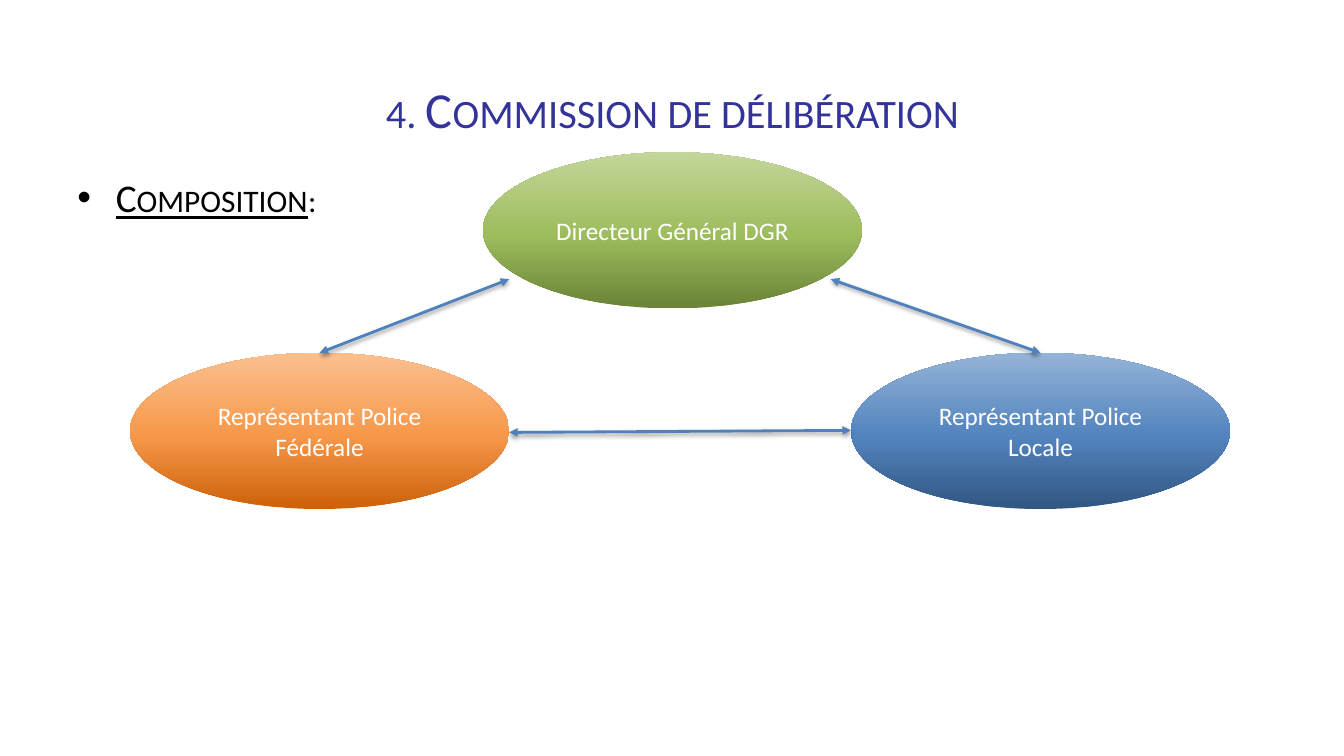
from copy import deepcopy

from lxml import etree
from pptx import Presentation
from pptx.dml.color import RGBColor
from pptx.enum.shapes import MSO_CONNECTOR, MSO_SHAPE
from pptx.enum.text import MSO_ANCHOR, PP_ALIGN
from pptx.oxml import parse_xml
from pptx.oxml.ns import nsdecls, qn
from pptx.util import Inches, Pt

CENTER, JUSTIFY = PP_ALIGN.CENTER, PP_ALIGN.JUSTIFY
TOP, MIDDLE = MSO_ANCHOR.TOP, MSO_ANCHOR.MIDDLE
ELLIPSE, STRAIGHT = MSO_SHAPE.OVAL, MSO_CONNECTOR.STRAIGHT

FONT = "Calibri"
WHITE = RGBColor(0xFF, 0xFF, 0xFF)
BLACK = RGBColor(0, 0, 0)
NAVY = RGBColor(0x33, 0x33, 0x99)
ARROW_BLUE = RGBColor(0x4F, 0x81, 0xBD)
GREENS = [RGBColor(0x6A, 0x83, 0x36), RGBColor(0x9E, 0xBD, 0x5E), RGBColor(0xC3, 0xD6, 0x9B)]
ORANGES = [RGBColor(0xCC, 0x61, 0x09), RGBColor(0xF7, 0x99, 0x4C), RGBColor(0xFA, 0xC0, 0x90)]
BLUES = [RGBColor(0x31, 0x56, 0x83), RGBColor(0x54, 0x85, 0xBF), RGBColor(0x95, 0xB3, 0xD7)]
STOPS = [0, 0.48, 1]

MEMBER_W, MEMBER_H = 3.76, 1.55
SHADOW = (
    f'<a:effectLst {nsdecls("a")}><a:outerShdw blurRad="40000" dist="20000" dir="5400000" '
    'rotWithShape="0"><a:srgbClr val="000000"><a:alpha val="38000"/></a:srgbClr>'
    "</a:outerShdw></a:effectLst>"
)


def format_run(r, size, color, small_caps=False):
    r.font.name = FONT
    r.font.size = Pt(size)
    r.font.color.rgb = color
    if small_caps:
        r.font._element.set("cap", "small")


def set_title(s, text):
    title = s.shapes.title
    title.left, title.top = Inches(0.67), Inches(0.3)
    title.width, title.height = Inches(12), Inches(1.25)
    tf = title.text_frame
    tf.text = text
    tf.vertical_anchor = MIDDLE
    p = tf.paragraphs[0]
    p.alignment = CENTER
    p.line_spacing = 1.5
    format_run(p.runs[0], 36, NAVY, True)


def add_heading(s, text):
    tf = s.shapes.add_textbox(Inches(0.67), Inches(1.67), Inches(4), Inches(0.6)).text_frame
    tf.word_wrap = True
    tf.vertical_anchor = TOP
    p = tf.paragraphs[0]
    p.alignment = JUSTIFY
    pPr = p._p.get_or_add_pPr()
    pPr.set("marL", str(Inches(0.38)))
    pPr.set("indent", str(-Inches(0.38)))
    etree.SubElement(pPr, qn("a:buFont")).set("typeface", "Arial")
    etree.SubElement(pPr, qn("a:buChar")).set("char", "•")
    for part in (text, ":"):
        r = p.add_run()
        r.text = part
        format_run(r, 28, BLACK, True)
        r.font.underline = part == text


def add_member(s, left, top, text, colors):
    sp = s.shapes.add_shape(ELLIPSE, Inches(left), Inches(top), Inches(MEMBER_W), Inches(MEMBER_H))
    sp.shadow.inherit = False
    sp.line.fill.background()
    sp.fill.gradient()
    sp.fill.gradient_angle = 90
    gs_list = sp._element.spPr.find(".//" + qn("a:gsLst"))
    gs_list.append(deepcopy(gs_list[-1]))
    for stop, position, color in zip(sp.fill.gradient_stops, STOPS, colors):
        stop.position = position
        stop.color.rgb = color
    tf = sp.text_frame
    tf.word_wrap = True
    tf.vertical_anchor = MIDDLE
    tf.text = text
    p = tf.paragraphs[0]
    p.alignment = CENTER
    format_run(p.runs[0], 18, WHITE)
    return sp


def add_double_arrow(s, x1, y1, x2, y2):
    line = s.shapes.add_connector(STRAIGHT, Inches(x1), Inches(y1), Inches(x2), Inches(y2))
    line.line.color.rgb = ARROW_BLUE
    line.line.width = Pt(2)
    ln = line.line._get_or_add_ln()
    for end in ("a:headEnd", "a:tailEnd"):
        etree.SubElement(ln, qn(end)).set("type", "triangle")
    line._element.spPr.append(parse_xml(SHADOW))
    return line


def main():
    prs = Presentation()
    prs.slide_width, prs.slide_height = Inches(13.33), Inches(7.5)
    s = prs.slides.add_slide(prs.slide_layouts[5])
    set_title(s, "4. Commission de délibération")
    add_heading(s, "Composition")

    add_member(s, 4.79, 1.51, "Directeur Général DGR", GREENS)
    federal = add_member(s, 1.29, 3.5, "Représentant Police Fédérale", ORANGES)
    local = add_member(s, 8.44, 3.5, "Représentant Police Locale", BLUES)

    add_double_arrow(s, 3.17, 3.5, 5.05, 2.77).begin_connect(federal, 0)
    add_double_arrow(s, 8.24, 2.77, 10.32, 3.5).end_connect(local, 0)
    add_double_arrow(s, 5.05, 4.29, 8.44, 4.27)

    prs.save("out.pptx")


if __name__ == "__main__":
    main()
